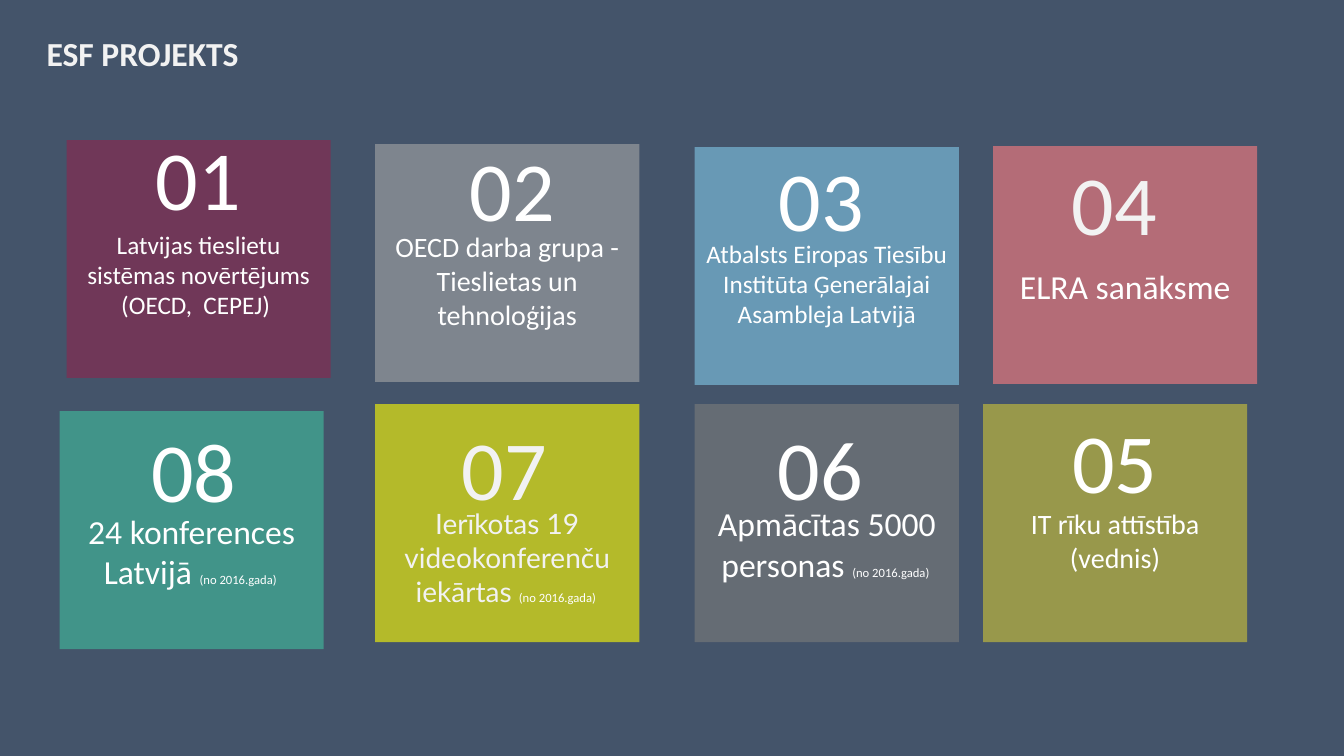
from dataclasses import dataclass

from lxml.etree import SubElement
from pptx import Presentation
from pptx.dml.color import RGBColor
from pptx.enum.shapes import MSO_SHAPE
from pptx.enum.text import MSO_ANCHOR, MSO_AUTO_SIZE, PP_ALIGN
from pptx.oxml.ns import qn
from pptx.util import Inches, Pt

SLIDE_WIDTH = Inches(13.33)
SLIDE_HEIGHT = Inches(7.5)
CARD_WIDTH = Inches(2.62)
CARD_HEIGHT = Inches(2.36)
NUMBER_HEIGHT = 0.47
LINE_HEIGHT = 1.22

NAVY = RGBColor(0x44, 0x54, 0x6A)
WHITE = RGBColor(0xFF, 0xFF, 0xFF)
OFF_WHITE = RGBColor(0xF2, 0xF2, 0xF2)
PLUM = RGBColor(0x8E, 0x25, 0x4D)
SILVER = RGBColor(0xA6, 0xA6, 0xA6)
SKY = RGBColor(0x81, 0xC7, 0xE7)
CORAL = RGBColor(0xFF, 0x7C, 0x80)
MUSTARD = RGBColor(0xD1, 0xC6, 0x37)
GREY = RGBColor(0x7C, 0x7C, 0x7C)
YELLOW = RGBColor(0xFF, 0xFF, 0x00)
GREEN = RGBColor(0x40, 0xC0, 0x9E)

SINCE = "(no 2016.gada) "


@dataclass
class Card:
    """A numbered card: left and top in percent of the slide, number box in shares of the card."""

    number: str
    left: float
    top: float
    fill: RGBColor
    text: str
    size: int
    number_box: tuple
    note: str = ""
    lead: int = 0
    font: str = "Calibri"
    text_color: RGBColor = WHITE
    number_color: RGBColor = WHITE


CARDS = [
    Card("01", 4.95, 18.53, PLUM, "Latvijas tieslietu sistēmas novērtējums (OECD,  CEPEJ) ", 18,
         (0.3, -0.08, 0.72), lead=18),
    Card("06", 51.69, 53.47, GREY, "Apmācītas 5000 personas ", 24,
         (0.14, 0.03, 0.67), note=SINCE, lead=24),
    Card("08", 4.43, 54.4, GREEN, "24 konferences Latvijā ", 24,
         (0.31, 0.01, 0.68), note=SINCE, lead=24),
    Card("03", 51.69, 19.47, SKY,
         "Atbalsts Eiropas Tiesību Institūta Ģenerālajai Asambleja Latvijā", 18,
         (0.28, -0.02, 0.53), lead=20),
    Card("02", 27.91, 19.07, SILVER, "OECD darba grupa - Tieslietas un tehnoloģijas", 20,
         (0.32, -0.05, 0.61), lead=20),
    Card("05", 73.14, 53.47, MUSTARD, "IT rīku attīstība (vednis)", 20,
         (0.3, 0, 0.44), lead=20),
    Card("04", 73.89, 19.33, CORAL, "ELRA sanāksme", 24,
         (0.26, 0, 0.48), lead=24, number_color=OFF_WHITE),
    Card("07", 27.91, 53.47, YELLOW, "Ierīkotas 19 videokonferenču iekārtas ", 20,
         (0.29, 0.03, 0.45), note=SINCE, lead=40, font="Lato",
         text_color=OFF_WHITE, number_color=OFF_WHITE),
]


def across(percent):
    """Return a percentage of the slide width."""
    return round(SLIDE_WIDTH * percent / 100)


def down(percent):
    """Return a percentage of the slide height."""
    return round(SLIDE_HEIGHT * percent / 100)


def style_font(font, size, color, name="Calibri", bold=False):
    """Set the face, size, weight and colour of a font."""
    font.name = name
    font.size = Pt(size)
    font.bold = bold
    font.color.rgb = color


def add_title(slide, left, top, width, height):
    """Place and format the title placeholder in the given box."""
    title = slide.shapes.title
    title.left, title.top, title.width, title.height = left, top, width, height
    frame = title.text_frame
    frame.text = "ESF PROJEKTS"
    frame.auto_size = MSO_AUTO_SIZE.NONE
    frame.vertical_anchor = MSO_ANCHOR.TOP
    paragraph = frame.paragraphs[0]
    paragraph.alignment = PP_ALIGN.CENTER
    style_font(paragraph.font, 24, OFF_WHITE, bold=True)


def add_panel(shapes, card, left, top):
    """Draw the translucent panel of a card with its description."""
    panel = shapes.add_shape(MSO_SHAPE.RECTANGLE, left, top, CARD_WIDTH, CARD_HEIGHT)
    panel.shadow.inherit = False
    panel.line.fill.background()
    panel.fill.solid()
    panel.fill.fore_color.rgb = card.fill
    color = panel.fill._xPr.find(qn("a:solidFill")).find(qn("a:srgbClr"))
    SubElement(color, qn("a:alpha")).set("val", "60000")
    frame = panel.text_frame
    frame.word_wrap = True
    frame.vertical_anchor = MSO_ANCHOR.MIDDLE
    frame.margin_top = Inches(0.05) + Pt(card.lead * LINE_HEIGHT)
    paragraph = frame.paragraphs[0]
    paragraph.alignment = PP_ALIGN.CENTER
    run = paragraph.add_run()
    run.text = card.text
    style_font(run.font, card.size, card.text_color, card.font)
    if card.note:
        note = paragraph.add_run()
        note.text = card.note
        style_font(note.font, 9, WHITE)


def add_number(shapes, card, left, top):
    """Write the number of a card in its box within the panel."""
    shift, drop, width = card.number_box
    box = shapes.add_textbox(
        left + round(CARD_WIDTH * shift), top + round(CARD_HEIGHT * drop),
        round(CARD_WIDTH * width), round(CARD_HEIGHT * NUMBER_HEIGHT))
    frame = box.text_frame
    frame.word_wrap = True
    frame.text = card.number
    paragraph = frame.paragraphs[0]
    paragraph.alignment = PP_ALIGN.CENTER if card.number == "06" else PP_ALIGN.LEFT
    style_font(paragraph.font, 60, card.number_color)


def add_card(slide, card, left, top):
    """Group the panel and the number of one card at the given corner."""
    shapes = slide.shapes.add_group_shape().shapes
    add_panel(shapes, card, left, top)
    add_number(shapes, card, left, top)


def main():
    """Build the project slide and save it."""
    presentation = Presentation()
    presentation.slide_width = SLIDE_WIDTH
    presentation.slide_height = SLIDE_HEIGHT
    slide = presentation.slides.add_slide(presentation.slide_layouts.get_by_name("Title Only"))
    slide.background.fill.solid()
    slide.background.fill.fore_color.rgb = NAVY
    add_title(slide, across(-1.65), down(3.73), across(24.53), down(6.67))
    for card in CARDS:
        add_card(slide, card, across(card.left), down(card.top))
    presentation.save("out.pptx")


if __name__ == "__main__":
    main()
